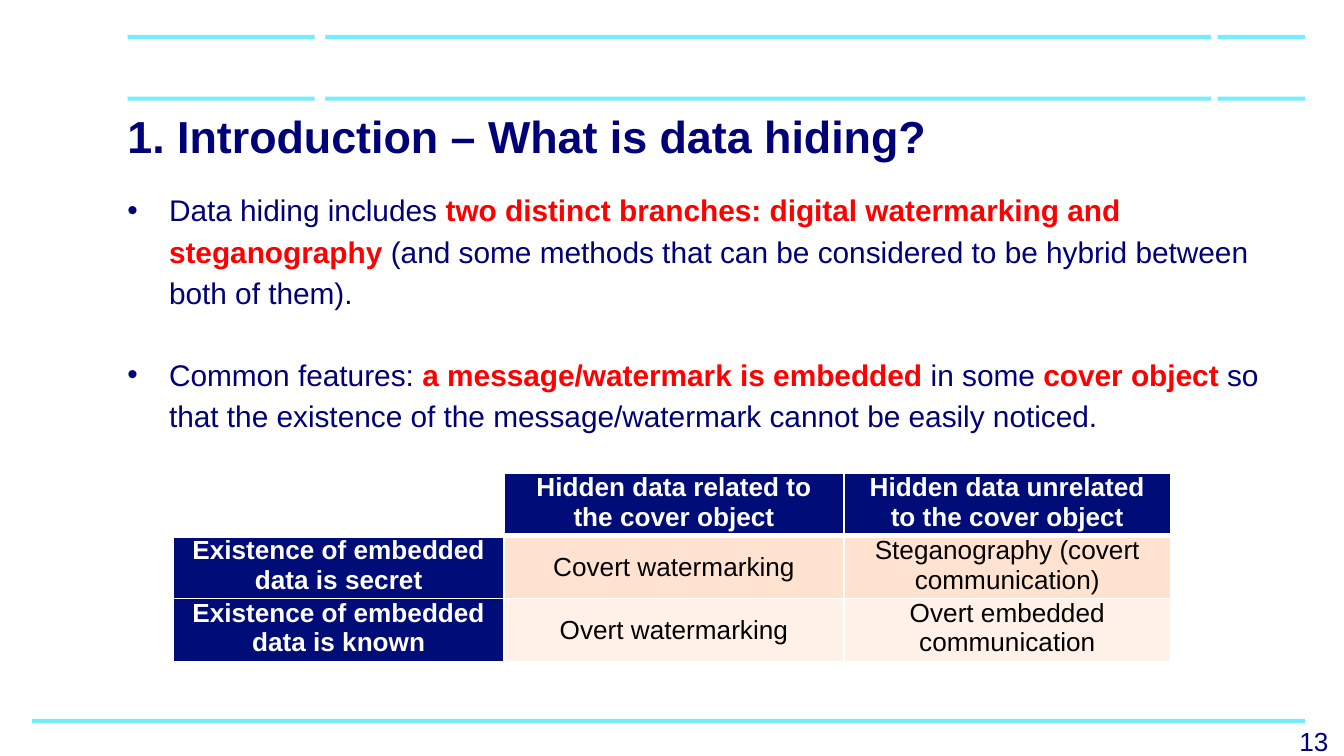
from lxml import etree
from pptx import Presentation
from pptx.dml.color import RGBColor
from pptx.enum import shapes, text
from pptx.oxml import ns
from pptx.util import Inches, Pt

CYAN = RGBColor(0x73, 0xED, 0xFF)
WHITE = RGBColor(0xFF, 0xFF, 0xFF)
BLACK = RGBColor(0, 0, 0)
NAVY = RGBColor(0x00, 0x00, 0x78)
HEADER_NAVY = RGBColor(0x00, 0x0D, 0x78)
RED = RGBColor(0xFF, 0, 0)
PEACH = RGBColor(0xFF, 0xE2, 0xCF)
PALE_PEACH = RGBColor(0xFF, 0xF1, 0xE8)

BULLETS = [
    [("Data hiding includes ", False),
     ("two distinct branches: digital watermarking and steganography", True),
     (" (and some methods that can be considered to be hybrid between both of them).", False)],
    [("Common features: ", False),
     ("a message/watermark is embedded", True),
     (" in some ", False),
     ("cover object ", True),
     ("so that the existence of the message/watermark cannot be easily noticed.", False)],
]
TABLE_ROWS = [
    ["", "Hidden data related to the cover object", "Hidden data unrelated to the cover object"],
    ["Existence of embedded data is secret", "Covert watermarking",
     "Steganography (covert communication)"],
    ["Existence of embedded data is known", "Overt watermarking",
     "Overt embedded communication"],
]
COLUMN_WIDTHS = [2.46, 2.53, 2.43]
ROW_FILLS = [HEADER_NAVY, PEACH, PALE_PEACH]


def style_font(font, size, color, bold=False):
    """Apply the slide's typeface with a size, colour and weight."""
    font.name = "Arial"
    font.size = Pt(size)
    font.color.rgb = color
    font.bold = bold


def add_bar(slide, left, top, width, height, color):
    """Draw one plain filled rectangle."""
    shape = slide.shapes.add_shape(shapes.MSO_SHAPE.RECTANGLE, Inches(left), Inches(top),
                                   Inches(width), Inches(height))
    shape.shadow.inherit = False
    shape.fill.solid()
    shape.fill.fore_color.rgb = color
    shape.line.fill.background()


def add_frame(slide, box, insets):
    """Add a wrapping text box and return its text frame."""
    frame = slide.shapes.add_textbox(*map(Inches, box)).text_frame
    frame.word_wrap = True
    frame.margin_left, frame.margin_top, frame.margin_right, frame.margin_bottom = map(Inches, insets)
    return frame


def add_rules(slide, left, top, right, bottom):
    """Draw the double rule at the head, its gap and the rule at the foot."""
    add_bar(slide, left, bottom, right - left, 0.03, CYAN)
    for rule_top in (top, top + 0.46):
        add_bar(slide, left + 0.71, rule_top, 8.06, 0.03, CYAN)
        add_bar(slide, right - 0.65, rule_top, 0.65, 0.03, CYAN)
    add_bar(slide, left + 2.1, top - 0.13, 0.08, 0.88, WHITE)


def add_line(slide, box, insets, wording, size, bold=False):
    """Add a text box holding a single navy line."""
    paragraph = add_frame(slide, box, insets).paragraphs[0]
    paragraph.text = wording
    style_font(paragraph.runs[0].font, size, NAVY, bold)


def add_bullet(paragraph):
    """Give a paragraph a navy bullet with a hanging indent."""
    properties = paragraph._p.get_or_add_pPr()
    properties.set("marL", str(Inches(0.31)))
    properties.set("indent", str(-Inches(0.31)))
    color = etree.SubElement(properties, ns.qn("a:buClr"))
    etree.SubElement(color, ns.qn("a:srgbClr"), val=str(NAVY))
    etree.SubElement(properties, ns.qn("a:buFont"), typeface="Arial")
    etree.SubElement(properties, ns.qn("a:buChar"), char="•")


def add_body(slide, box):
    """Add the bulleted statements with their key phrases in red."""
    frame = add_frame(slide, box, [0.1] * 4)
    for index, parts in enumerate(BULLETS):
        paragraph = frame.add_paragraph() if index else frame.paragraphs[0]
        add_bullet(paragraph)
        paragraph.line_spacing = 1.15
        if index:
            paragraph.space_before = Pt(22)
        for wording, is_key in parts:
            run = paragraph.add_run()
            run.text = wording
            style_font(run.font, 16, RED if is_key else NAVY, is_key)


def add_borders(cell, bottom_width):
    """Give a cell white borders, with the bottom one of a chosen width."""
    properties = cell._tc.get_or_add_tcPr()
    for index, side in enumerate(("lnL", "lnR", "lnT", "lnB")):
        width = bottom_width if side == "lnB" else 1
        line = etree.Element(ns.qn(f"a:{side}"), w=str(Pt(width)))
        fill = etree.SubElement(line, ns.qn("a:solidFill"))
        etree.SubElement(fill, ns.qn("a:srgbClr"), val=str(WHITE))
        properties.insert(index, line)


def fill_cell(cell, wording, fill, is_header, is_middle):
    """Write and format one labelled table cell."""
    cell.margin_left = cell.margin_right = Inches(0.08)
    cell.margin_top = cell.margin_bottom = 0
    if not wording:
        cell.fill.background()
        return
    cell.fill.solid()
    cell.fill.fore_color.rgb = fill
    cell.vertical_anchor = text.MSO_ANCHOR.MIDDLE if is_middle else text.MSO_ANCHOR.TOP
    cell.text_frame.text = wording
    paragraph = cell.text_frame.paragraphs[0]
    paragraph.alignment = text.PP_ALIGN.CENTER
    style_font(paragraph.runs[0].font, 14, WHITE if is_header else BLACK, is_header)


def add_comparison(slide, box):
    """Add the table that crosses secrecy with relation to the cover object."""
    table = slide.shapes.add_table(3, 3, *map(Inches, box)).table
    table.first_row = table.horz_banding = False
    for column, width in zip(table.columns, COLUMN_WIDTHS):
        column.width = Inches(width)
    for row_index, wordings in enumerate(TABLE_ROWS):
        for column_index, wording in enumerate(wordings):
            cell = table.cell(row_index, column_index)
            is_header = row_index == 0 or column_index == 0
            fill = HEADER_NAVY if is_header else ROW_FILLS[row_index]
            fill_cell(cell, wording, fill, is_header, row_index > 0 and column_index == 1)
            add_borders(cell, 1 if row_index else 3)


def main():
    """Build and save the slide."""
    presentation = Presentation()
    presentation.slide_width = Inches(10)
    presentation.slide_height = presentation.slide_width * 9 // 16
    slide = presentation.slides.add_slide(presentation.slide_layouts[6])
    add_rules(slide, 0.24, 0.26, 9.71, 5.35)
    add_line(slide, (0.85, 0.71, 8.86, 0.85), [0.1] * 4,
             "1. Introduction – What is data hiding?", 24, True)
    add_body(slide, (0.85, 1.29, 8.86, 3.9))
    add_line(slide, (9.57, 5.35, 0.43, 0.34), (0.1, 0.05, 0.1, 0.05), "13", 14)
    add_comparison(slide, (1.29, 3.52, 7.42, 1.4))
    presentation.save("out.pptx")


if __name__ == "__main__":
    main()
